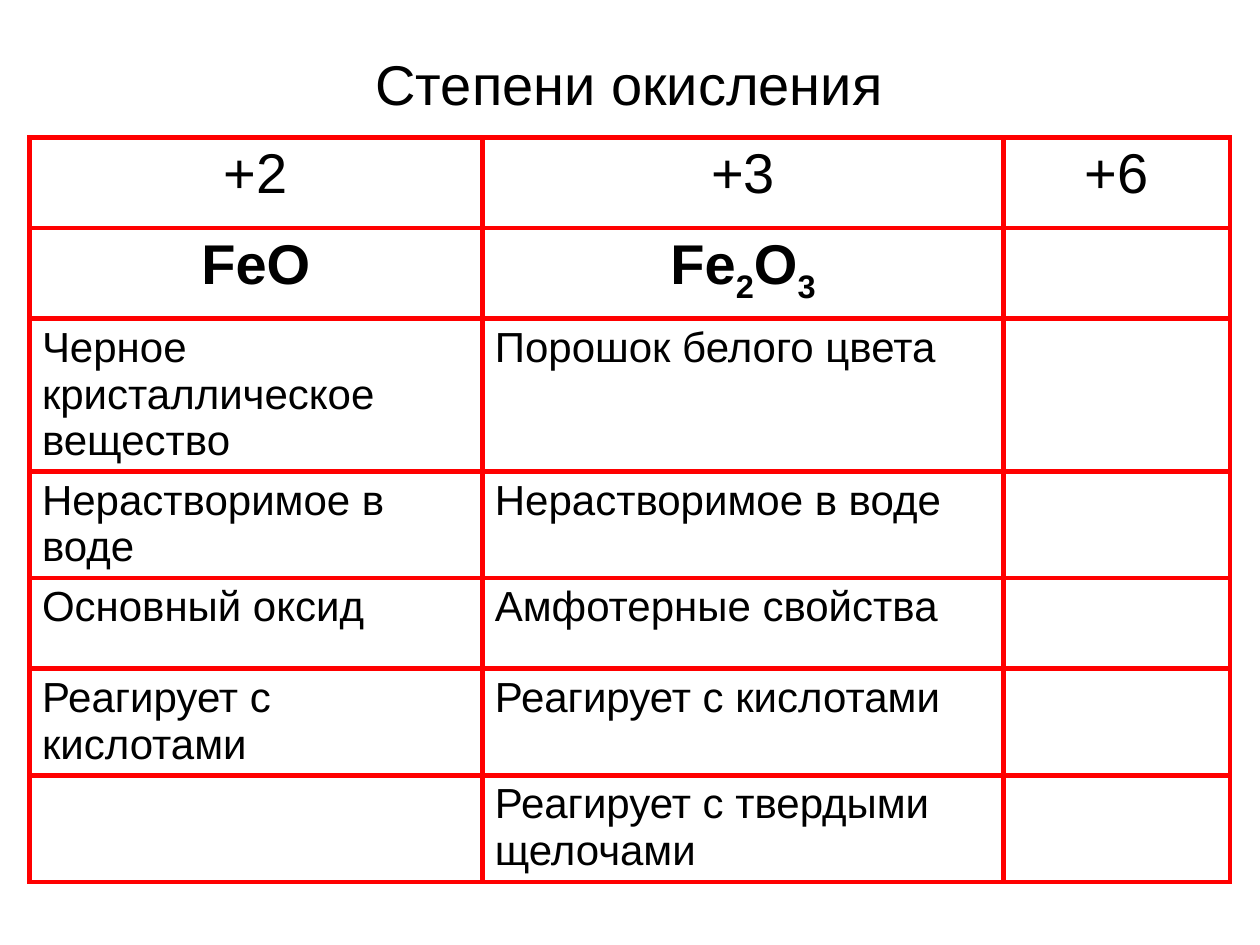
from dataclasses import dataclass

from lxml import etree
from pptx import Presentation
from pptx.dml.color import RGBColor
from pptx.enum.shapes import MSO_SHAPE
from pptx.enum.text import MSO_ANCHOR, PP_ALIGN
from pptx.oxml.ns import qn
from pptx.table import _Cell
from pptx.text.text import TextFrame
from pptx.util import Pt

CENTER = PP_ALIGN.CENTER
LEFT = PP_ALIGN.LEFT
MIDDLE = MSO_ANCHOR.MIDDLE
ROUNDED = MSO_SHAPE.ROUNDED_RECTANGLE

BLACK = RGBColor(0x00, 0x00, 0x00)
RED = RGBColor(0xFF, 0x00, 0x00)

FONT = "Arial"
HEADING_SIZE = 32
BODY_SIZE = 24
SUBSCRIPT = -25000
BORDER_WIDTH = 3
BORDER_SIDES = ("a:lnL", "a:lnR", "a:lnT", "a:lnB")

TABLE_LEFT, TABLE_TOP = 16.8, 78.5
COLUMN_WIDTHS = (258.8, 298, 129.4)
ONE_LINE, TWO_LINES, THREE_LINES = 51.8, 60.9, 87.4
CELL_TOP_MARGIN = 3.2


@dataclass(frozen=True)
class Fragment:
    text: str
    subscript: bool = False


@dataclass(frozen=True)
class Row:
    entries: tuple[str | tuple[Fragment, ...], ...]
    height: float = TWO_LINES
    size: int = BODY_SIZE
    bold: bool = False
    align: PP_ALIGN = LEFT


IRON_III_OXIDE = (
    Fragment("Fe"), Fragment("2", True), Fragment("O"), Fragment("3", True),
)

ROWS = (
    Row(("+2", "+3", "+6"), ONE_LINE, HEADING_SIZE, align=CENTER),
    Row(("FeO", IRON_III_OXIDE, ""), ONE_LINE, HEADING_SIZE, True, CENTER),
    Row(("Черное кристаллическое вещество", "Порошок белого цвета", ""), THREE_LINES),
    Row(("Нерастворимое в воде", "Нерастворимое в воде", "")),
    Row(("Основный оксид", "Амфотерные свойства", ""), ONE_LINE),
    Row(("Реагирует с кислотами", "Реагирует с кислотами", "")),
    Row(("", "Реагирует с твердыми щелочами", "")),
)


def write_text(
    frame: TextFrame,
    content: str | tuple[Fragment, ...],
    *,
    size: int = BODY_SIZE,
    bold: bool = False,
    align: PP_ALIGN = LEFT,
    color: RGBColor = BLACK,
) -> None:
    fragments = (Fragment(content),) if isinstance(content, str) else content
    paragraph = frame.paragraphs[0]
    paragraph.alignment = align
    for fragment in fragments:
        run = paragraph.add_run()
        run.text = fragment.text
        run.font.name = FONT
        run.font.size = Pt(size)
        run.font.bold = bold
        run.font.color.rgb = color
        if fragment.subscript:
            run._r.get_or_add_rPr().set("baseline", str(SUBSCRIPT))


def draw_borders(cell: _Cell) -> None:
    properties = cell._tc.get_or_add_tcPr()
    for side in BORDER_SIDES:
        line = etree.SubElement(properties, qn(side), w=str(Pt(BORDER_WIDTH)))
        fill = etree.SubElement(line, qn("a:solidFill"))
        etree.SubElement(fill, qn("a:srgbClr"), val=str(RED))


def draw_title(slide) -> None:
    title = slide.shapes.add_shape(ROUNDED, Pt(140.4), Pt(21.6), Pt(438.5), Pt(51.8))
    title.shadow.inherit = False
    title.fill.background()
    title.line.fill.background()
    title.text_frame.word_wrap = True
    title.text_frame.vertical_anchor = MIDDLE
    write_text(title.text_frame, "Степени окисления", size=HEADING_SIZE, align=CENTER)


def draw_oxide_table(slide) -> None:
    oxides = slide.shapes.add_table(
        len(ROWS), len(COLUMN_WIDTHS), Pt(TABLE_LEFT), Pt(TABLE_TOP),
        Pt(sum(COLUMN_WIDTHS)), Pt(sum(row.height for row in ROWS)),
    ).table
    oxides.first_row = False
    oxides.horz_banding = False
    for column, width in zip(oxides.columns, COLUMN_WIDTHS):
        column.width = Pt(width)
    for table_row, row in zip(oxides.rows, ROWS):
        table_row.height = Pt(row.height)
        for cell, entry in zip(table_row.cells, row.entries):
            draw_borders(cell)
            cell.fill.background()
            cell.margin_top = Pt(CELL_TOP_MARGIN)
            cell.margin_bottom = Pt(0)
            if entry:
                write_text(
                    cell.text_frame, entry,
                    size=row.size, bold=row.bold, align=row.align,
                )


def main() -> None:
    presentation = Presentation()
    presentation.slide_width = Pt(720)
    presentation.slide_height = Pt(540)
    slide = presentation.slides.add_slide(presentation.slide_layouts[6])
    draw_title(slide)
    draw_oxide_table(slide)
    presentation.save("out.pptx")


if __name__ == "__main__":
    main()
